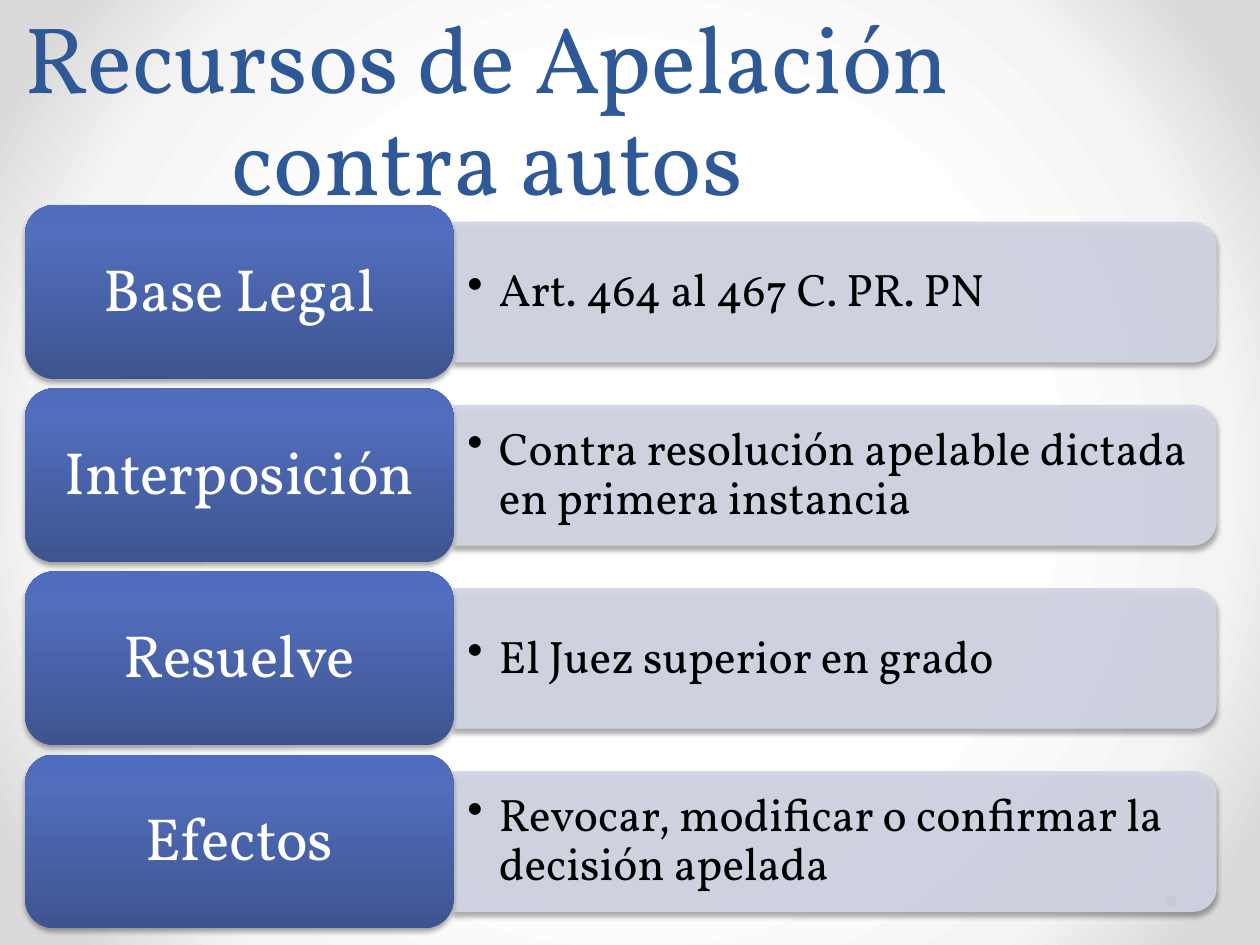
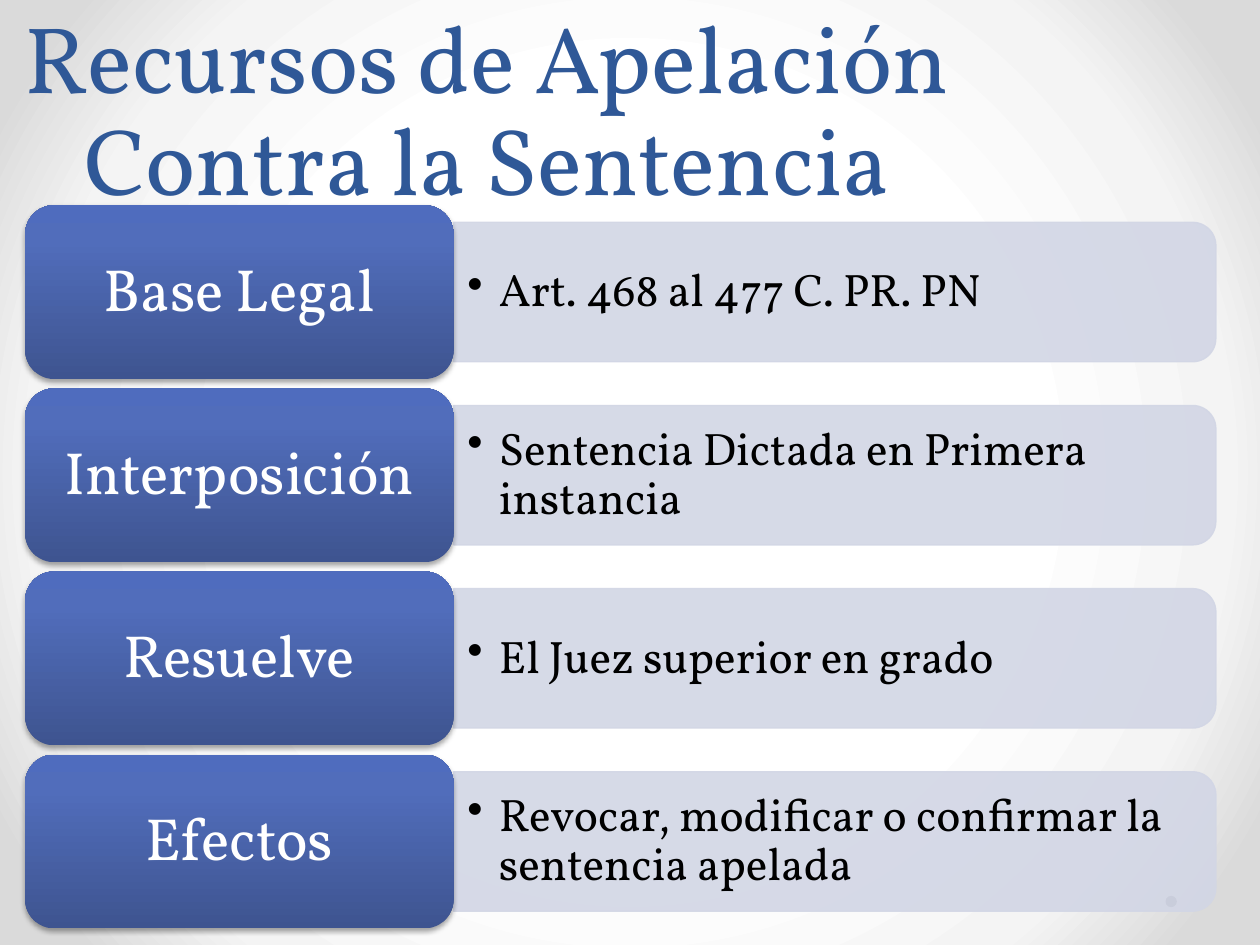
from dataclasses import dataclass

from lxml.etree import SubElement
from pptx import Presentation
from pptx.dml.color import RGBColor
from pptx.enum.shapes import MSO_SHAPE
from pptx.enum.text import MSO_ANCHOR, PP_ALIGN
from pptx.oxml import parse_xml
from pptx.oxml.ns import nsdecls, qn
from pptx.shapes.autoshape import Shape
from pptx.slide import Slide
from pptx.util import Inches, Pt

# Shared look
WIDE, HIGH = Inches(10), Inches(7.5)
FONT = "Vollkorn"
NAVY = RGBColor(0x2F, 0x58, 0x97)
PALE = RGBColor(0xD2, 0xD6, 0xE5)
GRAY = RGBColor(0x80, 0x80, 0x80)
WHITE = RGBColor(0xFF, 0xFF, 0xFF)
BLACK = RGBColor(0, 0, 0)
BLUES = [(0, RGBColor(0x3E, 0x54, 0x90)), (80, RGBColor(0x51, 0x6D, 0xBB)),
         (100, RGBColor(0x4F, 0x6C, 0xBE))]
GLOW = [(50, WHITE), (76, RGBColor(0xF4, 0xF4, 0xF4)), (92, RGBColor(0xDA, 0xDA, 0xDA))]
UPWARD = '<a:lin ang="16200000" scaled="0"/>'
ROUND = ('<a:path path="circle"><a:fillToRect l="50000" t="50000" '
         'r="50000" b="50000"/></a:path>')


@dataclass
class Box:
    """A frame in percent of the slide's width and height."""
    x: float
    y: float
    w: float
    h: float

    def place(self, turned: bool = False) -> tuple[int, int, int, int]:
        x, w = (int(WIDE * n / 100) for n in (self.x, self.w))
        y, h = (int(HIGH * n / 100) for n in (self.y, self.h))
        if turned:  # frame that covers the same area after a quarter turn
            return x + (w - h) // 2, y + (h - w) // 2, h, w
        return x, y, w, h


@dataclass
class Row:
    label: str
    note: str


@dataclass
class Page:
    title: str
    rows: list[Row]
    raised: bool  # whether the note bands cast a shadow


# Layout
TITLE = Box(-0.4, 0, 78.1, 23.33)
DOT = Box(92.5, 94.8, 0.9, 1.2)
TOP, STEP = 21.71, 19.38
LABEL_H, BAND_H, NOTE_H = 18.4, 14.76, 13.33

PAGES = [
    Page("Recursos de Apelación\vcontra autos", [
        Row("Base Legal", "Art. 464 al 467 C. PR. PN"),
        Row("Interposición", "Contra resolución apelable dictada en primera instancia"),
        Row("Resuelve", "El Juez superior en grado"),
        Row("Efectos", "Revocar, modificar o confirmar la decisión apelada"),
    ], True),
    Page("Recursos de Apelación\vContra la Sentencia", [
        Row("Base Legal", "Art. 468 al 477 C. PR. PN"),
        Row("Interposición", "Sentencia Dictada en Primera instancia"),
        Row("Resuelve", "El Juez superior en grado"),
        Row("Efectos", "Revocar, modificar o confirmar la sentencia apelada"),
    ], False),
]


def blend(owner, root, stops: list, way: str) -> None:
    """Fill the owner with a gradient; root is its XML element."""
    owner.fill.background()
    marks = "".join(f'<a:gs pos="{pos * 1000}"><a:srgbClr val="{tone}"/></a:gs>'
                    for pos, tone in stops)
    old = next(root.iter(qn("a:noFill")))
    old.getparent().replace(old, parse_xml(
        f'<a:gradFill {nsdecls("a")} rotWithShape="1"><a:gsLst>{marks}</a:gsLst>{way}</a:gradFill>'))


def shade(shape: Shape) -> None:
    """Cast a soft shadow straight down."""
    shape.element.spPr.find(qn("a:effectLst")).append(parse_xml(
        f'<a:outerShdw {nsdecls("a")} blurRad="{Pt(3.1)}" dist="{Pt(1.8)}" dir="5400000" '
        'rotWithShape="0"><a:srgbClr val="000000"><a:alpha val="35000"/></a:srgbClr></a:outerShdw>'))


def form(slide: Slide, kind: MSO_SHAPE, box: Box, turned: bool = False) -> Shape:
    shape = slide.shapes.add_shape(kind, *box.place(turned))
    shape.shadow.inherit = False
    shape.line.fill.background()
    if turned:
        shape.rotation = 90
    return shape


def write(shape: Shape, text: str, *, size: int, color: RGBColor, gap=0.9,
          pad: tuple = (0.1, 0.05), anchor=MSO_ANCHOR.MIDDLE,
          align=PP_ALIGN.CENTER, bullet: bool = False) -> None:
    frame = shape.text_frame
    frame.word_wrap = True
    frame.vertical_anchor = anchor
    frame.margin_left = frame.margin_right = Inches(pad[0])
    frame.margin_top = frame.margin_bottom = Inches(pad[1])
    para = frame.paragraphs[0]
    para.text = text
    para.alignment = align
    para.line_spacing = gap
    if bullet:
        para.level = 1
        props = para._p.get_or_add_pPr()
        props.set("marL", str(Inches(0.25)))
        props.set("indent", str(-Inches(0.25)))
        SubElement(props, qn("a:buChar")).set("char", "•")
    for run in para.runs:
        run.font.name, run.font.size = FONT, Pt(size)
        run.font.color.rgb = color


def draw_row(slide: Slide, row: Row, y: float, raised: bool) -> None:
    mid = y + LABEL_H / 2

    # Band and its note
    band = form(slide, MSO_SHAPE.ROUND_2_SAME_RECTANGLE,
                Box(36, mid - BAND_H / 2, 60.5, BAND_H), turned=True)
    band.fill.solid()
    band.fill.fore_color.rgb = band.line.color.rgb = PALE
    band.line.width = Pt(0.75)
    for tone in band.element.spPr.iter(qn("a:srgbClr")):
        SubElement(tone, qn("a:alpha")).set("val", "90000")
    if raised:
        shade(band)
    note = slide.shapes.add_textbox(*Box(36, mid - NOTE_H / 2, 59.9, NOTE_H).place())
    write(note, row.note, size=26, color=BLACK, pad=(0.11, 0.05),
          align=PP_ALIGN.LEFT, bullet=True)

    # Label
    label = form(slide, MSO_SHAPE.ROUNDED_RECTANGLE, Box(2, y, 34, LABEL_H))
    blend(label, label.element.spPr, BLUES, UPWARD)
    shade(label)
    write(label, row.label, size=34, color=WHITE, pad=(0.14, 0.07))


def draw_page(slide: Slide, page: Page) -> None:
    dot = form(slide, MSO_SHAPE.OVAL, DOT)
    dot.fill.solid()
    dot.fill.fore_color.rgb = GRAY
    title = slide.shapes.add_textbox(*TITLE.place())
    write(title, page.title, size=54, color=NAVY, gap=Pt(58), anchor=MSO_ANCHOR.BOTTOM)
    for i, row in enumerate(page.rows):
        draw_row(slide, row, TOP + i * STEP, page.raised)


def main() -> None:
    deck = Presentation()
    deck.slide_width, deck.slide_height = WIDE, HIGH
    master = deck.slide_master
    blend(master.background, master.element, GLOW, ROUND)
    for page in PAGES:
        draw_page(deck.slides.add_slide(deck.slide_layouts[6]), page)
    deck.save("out.pptx")


if __name__ == "__main__":
    main()
